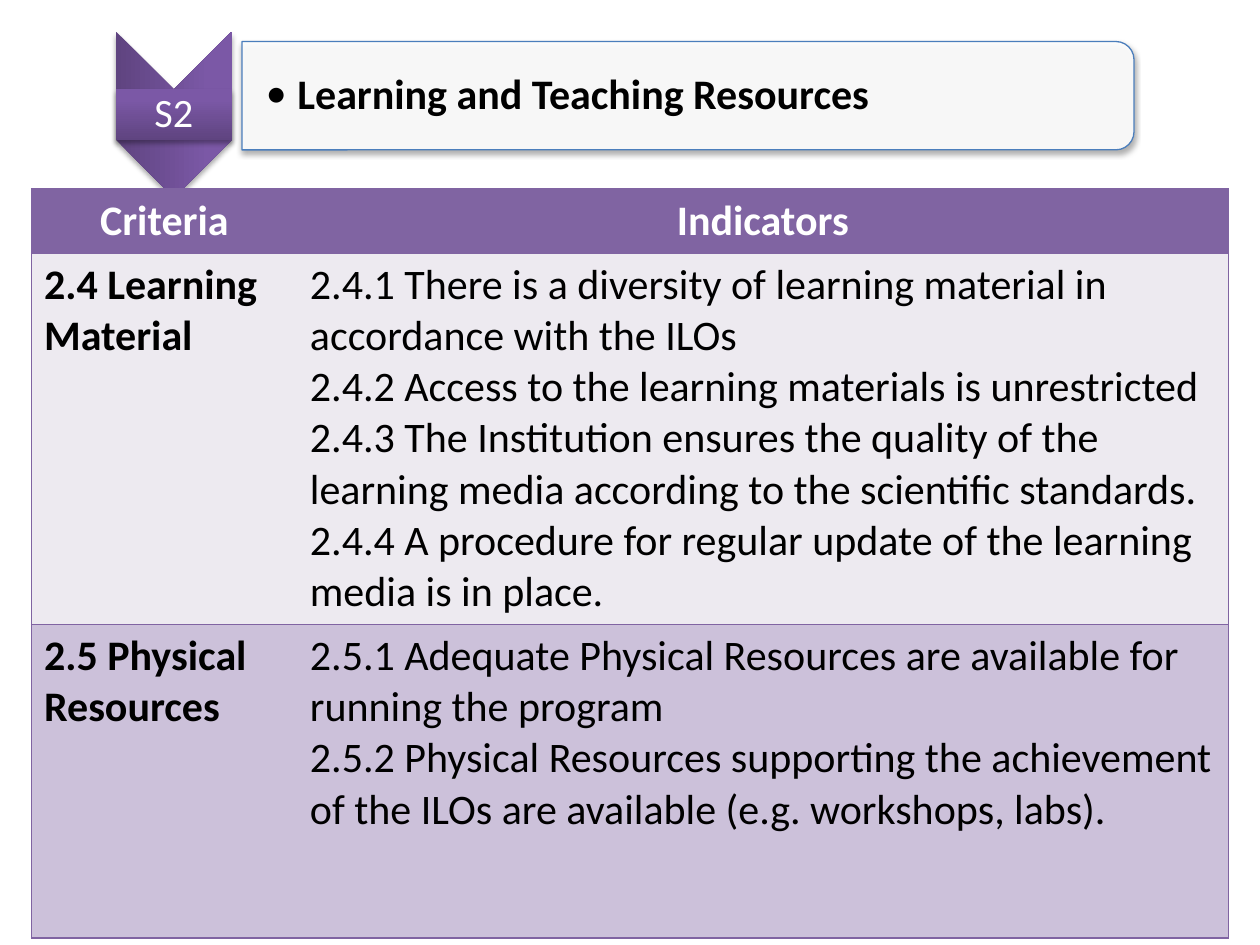
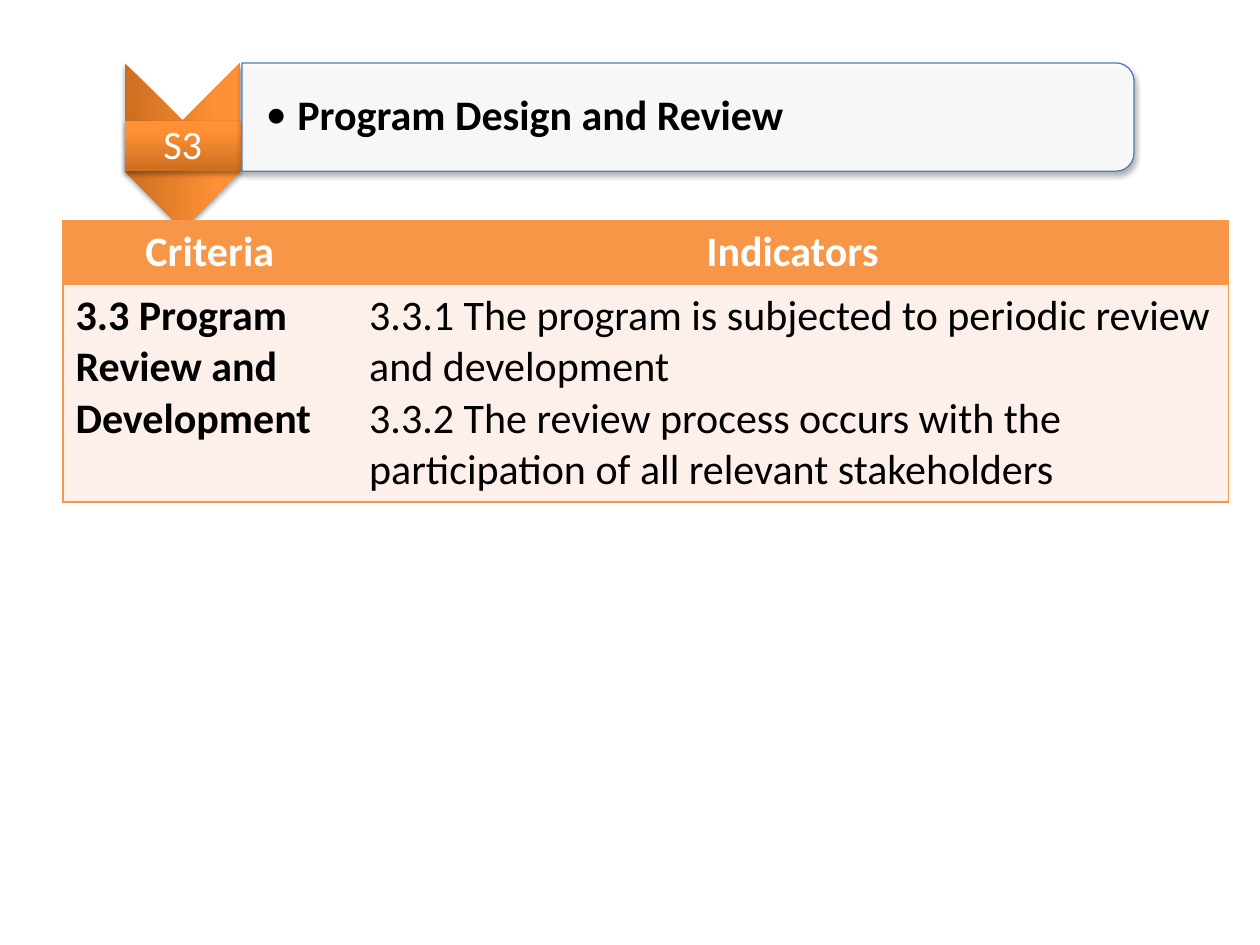
from copy import deepcopy
from dataclasses import dataclass

from lxml.etree import SubElement
from pptx import Presentation
from pptx.dml.color import RGBColor
from pptx.enum.shapes import MSO_SHAPE
from pptx.enum.text import MSO_ANCHOR, MSO_AUTO_SIZE, PP_ALIGN
from pptx.oxml.ns import qn
from pptx.shapes.autoshape import Shape
from pptx.slide import Slide
from pptx.table import _Cell
from pptx.text.text import TextFrame
from pptx.util import Emu, Inches, Pt

SLIDE_WIDTH, SLIDE_HEIGHT = Inches(10), Inches(7.5)
GRID_COLUMNS, GRID_ROWS = 100, 75
TITLE_ONLY_LAYOUT = 5
PLAIN_TABLE_STYLE = "{2D5ABB26-0587-4C30-8999-92F81FD0307C}"
FONT = "Calibri"
TEXT_SIZE, LABEL_SIZE = 24, 23
WHITE, BLACK, PANEL_LINE = "FFFFFF", "000000", "4B7EBC"
PANEL_OPACITY, SHADOW_OPACITY = 90, 35
ARROW_WIDTH, ARROW_HEIGHT = 9.2, 13.2
LABEL_HEIGHT = 4
PANEL_LEFT, PANEL_WIDTH, PANEL_HEIGHT = 19.2, 70.8, 8.6
TITLE_WIDTH, TITLE_HEIGHT = 70.4, 7.7
HEADINGS = ("Criteria", "Indicators")


@dataclass(frozen=True)
class Box:
    """A rectangle in grid columns and rows."""

    left: float
    top: float
    width: float
    height: float

    def turned(self) -> "Box":
        """Return the frame that fills this box after a quarter turn."""
        shift = (self.width - self.height) / 2
        return Box(self.left + shift, self.top - shift, self.height, self.width)

    def lengths(self) -> tuple[Emu, Emu, Emu, Emu]:
        """Return left, top, width and height as slide lengths."""
        return across(self.left), down(self.top), across(self.width), down(self.height)


@dataclass(frozen=True)
class Theme:
    """Colours of one standard."""

    gradient: tuple[str, str, str]
    accent: str
    bands: tuple[str, ...]


@dataclass(frozen=True)
class Criterion:
    """A criterion with its indicators and row height."""

    name: str
    indicators: tuple[str, ...]
    height: float


@dataclass(frozen=True)
class Standard:
    """Everything that one slide shows."""

    code: str
    title: str
    theme: Theme
    arrow_left: float
    arrow_top: float
    panel_top: float
    table_left: float
    table_top: float
    column_widths: tuple[float, float]
    criteria: tuple[Criterion, ...]


PURPLE = Theme(("5F4480", "7B58A6", "7C57A8"), "8064A2", ("EDEAF0", "CCC1DA"))
ORANGE = Theme(("CC6E20", "FF9034", "FF9136"), "F79646", ("FDEFE9",))
GRADIENT_POSITIONS = (0, 0.8, 1)
HEADER_HEIGHT = 4.8

STANDARDS = (
    Standard(
        "S2", "Learning and Teaching Resources", PURPLE,
        9.2, 2.5, 3.3, 2.5, 15, (21.1, 73.9),
        (
            Criterion("2.4 Learning Material", (
                "2.4.1 There is a diversity of learning material in accordance with the ILOs",
                "2.4.2 Access to the learning materials is unrestricted",
                "2.4.3 The Institution ensures the quality of the learning media "
                "according to the scientific standards.",
                "2.4.4 A procedure for regular update of the learning media is in place.",
            ), 27.8),
            Criterion("2.5 Physical Resources", (
                "2.5.1 Adequate Physical Resources are available for running the program",
                "2.5.2 Physical Resources supporting the achievement of the ILOs "
                "are available (e.g. workshops, labs).",
            ), 24.9),
        ),
    ),
    Standard(
        "S3", "Program Design and Review", ORANGE,
        9.9, 5, 5, 5, 17.5, (23.3, 69.2),
        (
            Criterion("3.3 Program Review and Development", (
                "3.3.1 The program is subjected to periodic review and development",
                "3.3.2 The review process occurs with the participation "
                "of all relevant stakeholders",
            ), 15),
        ),
    ),
)


def across(columns: float) -> Emu:
    """Convert grid columns to a length."""
    return Emu(round(SLIDE_WIDTH * columns / GRID_COLUMNS))


def down(rows: float) -> Emu:
    """Convert grid rows to a length."""
    return Emu(round(SLIDE_HEIGHT * rows / GRID_ROWS))


def rgb(color: str) -> RGBColor:
    """Convert a hex string to a colour."""
    return RGBColor.from_string(color)


def format_text(text_frame: TextFrame, color: str, size: float, bold: bool,
                alignment: PP_ALIGN = PP_ALIGN.LEFT) -> None:
    """Format every paragraph and run of a text frame."""
    for paragraph in text_frame.paragraphs:
        paragraph.alignment = alignment
        for run in paragraph.runs:
            run.font.name, run.font.size, run.font.bold = FONT, Pt(size), bold
            run.font.color.rgb = rgb(color)


def set_frame(text_frame: TextFrame, left_margin: float) -> None:
    """Centre a text frame vertically with narrow margins."""
    text_frame.word_wrap = True
    text_frame.auto_size = MSO_AUTO_SIZE.NONE
    text_frame.vertical_anchor = MSO_ANCHOR.MIDDLE
    text_frame.margin_left = Inches(left_margin)
    text_frame.margin_top = text_frame.margin_right = text_frame.margin_bottom = Inches(0.02)
    text_frame.paragraphs[0].line_spacing = 0.9


def add_shadow(shape: Shape) -> None:
    """Give a shape a soft shadow that falls downwards."""
    shape.shadow.inherit = False
    effects = shape.element.spPr.find(qn("a:effectLst"))
    shadow = SubElement(effects, qn("a:outerShdw"), blurRad=str(Pt(3.1)), dist=str(Pt(1.8)),
                        dir="5400000", rotWithShape="0")
    color = SubElement(shadow, qn("a:srgbClr"), val=BLACK)
    SubElement(color, qn("a:alpha"), val=str(SHADOW_OPACITY * 1000))


def add_gradient_shape(slide: Slide, kind: MSO_SHAPE, box: Box, theme: Theme) -> Shape:
    """Add a borderless shape that lightens from bottom to top."""
    shape = slide.shapes.add_shape(kind, *box.lengths())
    shape.fill.gradient()
    shape.fill.gradient_angle = 90
    stop_list = shape.element.spPr.find(".//" + qn("a:gsLst"))
    stop_list.append(deepcopy(stop_list[-1]))
    for stop, position, color in zip(shape.fill.gradient_stops, GRADIENT_POSITIONS, theme.gradient):
        stop.position = position
        stop.color.rgb = rgb(color)
    shape.line.fill.background()
    add_shadow(shape)
    return shape


def add_arrow(slide: Slide, standard: Standard) -> None:
    """Add the downward chevron and its code label."""
    box = Box(standard.arrow_left, standard.arrow_top, ARROW_WIDTH, ARROW_HEIGHT)
    chevron = add_gradient_shape(slide, MSO_SHAPE.CHEVRON, box.turned(), standard.theme)
    chevron.rotation = 90
    label_box = Box(box.left, box.top + ARROW_WIDTH / 2, ARROW_WIDTH, LABEL_HEIGHT)
    label = add_gradient_shape(slide, MSO_SHAPE.RECTANGLE, label_box, standard.theme)
    label.text_frame.text = standard.code
    set_frame(label.text_frame, 0.02)
    format_text(label.text_frame, WHITE, LABEL_SIZE, False, PP_ALIGN.CENTER)


def add_title_panel(slide: Slide, standard: Standard) -> None:
    """Add the rounded panel and lay the bulleted title over it."""
    box = Box(PANEL_LEFT, standard.panel_top, PANEL_WIDTH, PANEL_HEIGHT)
    panel = slide.shapes.add_shape(MSO_SHAPE.ROUND_2_SAME_RECTANGLE, *box.turned().lengths())
    panel.rotation = 90
    panel.fill.solid()
    panel.fill.fore_color.rgb = rgb(WHITE)
    fill_color = panel.element.spPr.find(qn("a:solidFill"))[0]
    SubElement(fill_color, qn("a:alpha"), val=str(PANEL_OPACITY * 1000))
    panel.line.color.rgb = rgb(PANEL_LINE)
    panel.line.width = Pt(0.75)
    add_shadow(panel)

    title = slide.shapes.title
    panel.element.addnext(title.element)
    title_top = box.top + (PANEL_HEIGHT - TITLE_HEIGHT) / 2
    title_box = Box(PANEL_LEFT, title_top, TITLE_WIDTH, TITLE_HEIGHT)
    title.left, title.top, title.width, title.height = title_box.lengths()
    title.text_frame.text = standard.title
    set_frame(title.text_frame, 0.19)
    format_text(title.text_frame, BLACK, TEXT_SIZE, True)
    properties = title.text_frame.paragraphs[0]._p.get_or_add_pPr()
    properties.set("marL", str(Inches(0.25)))
    properties.set("indent", str(-Inches(0.25)))
    SubElement(properties, qn("a:buFont"), typeface=FONT)
    SubElement(properties, qn("a:buChar"), char="•")


def fill_cell(cell: _Cell, text: str, fill: str, border: str, sides: str) -> TextFrame:
    """Write a cell, colour it and draw lines on the given sides."""
    properties = cell._tc.get_or_add_tcPr()
    for side in sides:
        line = SubElement(properties, qn(f"a:ln{side}"), w=str(Pt(1)))
        SubElement(SubElement(line, qn("a:solidFill")), qn("a:srgbClr"), val=border)
    cell.fill.solid()
    cell.fill.fore_color.rgb = rgb(fill)
    cell.text_frame.text = text
    return cell.text_frame


def add_criteria_table(slide: Slide, standard: Standard) -> None:
    """Add the table of criteria and indicators."""
    theme = standard.theme
    heights = (HEADER_HEIGHT, *(criterion.height for criterion in standard.criteria))
    box = Box(standard.table_left, standard.table_top, sum(standard.column_widths), sum(heights))
    frame = slide.shapes.add_table(len(heights), len(HEADINGS), *box.lengths())
    table = frame.table
    table.first_row = table.horz_banding = False
    table._tbl.tblPr.find(qn("a:tableStyleId")).text = PLAIN_TABLE_STYLE
    for column, width in zip(table.columns, standard.column_widths):
        column.width = across(width)
    for row, height in zip(table.rows, heights):
        row.height = down(height)

    contents = [HEADINGS]
    contents += [(item.name, "\n".join(item.indicators)) for item in standard.criteria]
    fills = (theme.accent, *theme.bands)
    for row_index, (texts, fill) in enumerate(zip(contents, fills)):
        is_header = row_index == 0
        color = WHITE if is_header else BLACK
        alignment = PP_ALIGN.CENTER if is_header else PP_ALIGN.LEFT
        for column_index, (text, sides) in enumerate(zip(texts, ("LTB", "RTB"))):
            cell = table.cell(row_index, column_index)
            text_frame = fill_cell(cell, text, fill, theme.accent, sides)
            format_text(text_frame, color, TEXT_SIZE, is_header or column_index == 0, alignment)


def main() -> None:
    """Build and save the presentation."""
    presentation = Presentation()
    presentation.slide_width, presentation.slide_height = SLIDE_WIDTH, SLIDE_HEIGHT
    for standard in STANDARDS:
        slide = presentation.slides.add_slide(presentation.slide_layouts[TITLE_ONLY_LAYOUT])
        add_arrow(slide, standard)
        add_title_panel(slide, standard)
        add_criteria_table(slide, standard)
    presentation.save("out.pptx")


if __name__ == "__main__":
    main()
